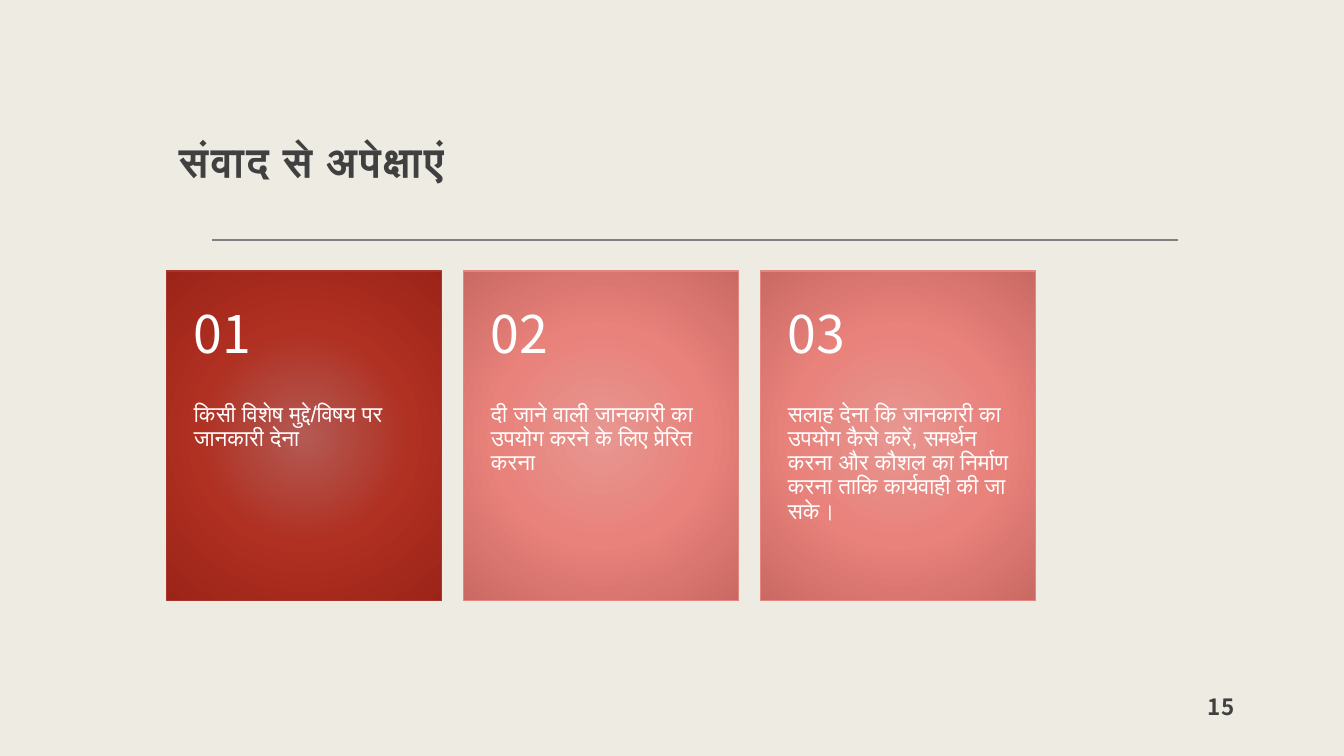
from lxml import etree
from pptx import Presentation
from pptx.dml.color import RGBColor
from pptx.enum.shapes import MSO_CONNECTOR, MSO_SHAPE
from pptx.enum.text import MSO_ANCHOR, PP_ALIGN
from pptx.oxml.ns import qn
from pptx.util import Pt

TITLE = "संवाद से अपेक्षाएं"
PAGE_NUMBER = "15"
EXPECTATIONS = [
    ("01", "किसी विशेष मुद्दे/विषय पर जानकारी देना"),
    ("02", "दी जाने वाली जानकारी का उपयोग करने के लिए प्रेरित करना"),
    ("03", "सलाह देना कि जानकारी का उपयोग कैसे करें, समर्थन करना और कौशल का "
           "निर्माण करना ताकि कार्यवाही की जा सके।"),
]

BACKGROUND = RGBColor(0xEE, 0xEB, 0xE2)
DARK = RGBColor(0x40, 0x40, 0x40)
WHITE = RGBColor(0xFF, 0xFF, 0xFF)
RULE = RGBColor(0x80, 0x80, 0x80)
RED_GLOW = [RGBColor(0xB3, 0x5A, 0x54), RGBColor(0xB0, 0x30, 0x22), RGBColor(0x9B, 0x24, 0x18)]
RED_EDGE = RGBColor(0xA9, 0x35, 0x29)
PINK_GLOW = [RGBColor(0xE8, 0x96, 0x91), RGBColor(0xE8, 0x82, 0x7B), RGBColor(0xCA, 0x69, 0x63)]
PINK_EDGE = RGBColor(0xE3, 0x86, 0x80)
CARD_COLOURS = [(RED_GLOW, RED_EDGE), (PINK_GLOW, PINK_EDGE), (PINK_GLOW, PINK_EDGE)]

HEADING_FONT = "Noto Sans CJK JP"
BODY_FONT = "Arial"

SLIDE_W, SLIDE_H = 1344, 756
SCALE = 12192000 / SLIDE_W
CARD_LEFT, CARD_TOP, CARD_W, CARD_H = 167, 271, 275, 330
CARD_PITCH = 297
NUMERAL_H = 132
PLAIN_INSETS = (12, 12, 12, 10)


def px(length):
    return round(length * SCALE)


def add_text(slide, text, box, insets, anchor, size, font_name, colour,
             bold=False, line_spacing=None, tracking=None):
    frame = slide.shapes.add_textbox(*map(px, box)).text_frame
    frame.word_wrap = True
    frame.vertical_anchor = anchor
    frame.margin_left, frame.margin_top, frame.margin_right, frame.margin_bottom = map(px, insets)
    paragraph = frame.paragraphs[0]
    paragraph.text = text
    paragraph.alignment = PP_ALIGN.LEFT
    if line_spacing:
        paragraph.line_spacing = line_spacing
    font = paragraph.font
    font.size = Pt(size)
    font.bold = bold
    font.color.rgb = colour
    font.name = font_name
    properties = paragraph._p.pPr.find(qn("a:defRPr"))
    etree.SubElement(properties, qn("a:cs"), typeface=font_name)
    if tracking:
        properties.set("spc", str(tracking))


def fill_radial(shape, colours):
    shape.fill.gradient()
    gradient = shape._element.spPr.find(qn("a:gradFill"))
    for child in list(gradient):
        gradient.remove(child)
    stops = etree.SubElement(gradient, qn("a:gsLst"))
    for position, colour in zip((0, 50000, 100000), colours):
        stop = etree.SubElement(stops, qn("a:gs"), pos=str(position))
        etree.SubElement(stop, qn("a:srgbClr"), val=str(colour))
    circle = etree.SubElement(gradient, qn("a:path"), {"path": "circle"})
    etree.SubElement(circle, qn("a:fillToRect"), {side: "50000" for side in "ltrb"})


def add_card(slide, index, numeral, message):
    left = CARD_LEFT + index * CARD_PITCH
    glow, edge = CARD_COLOURS[index]
    card = slide.shapes.add_shape(
        MSO_SHAPE.RECTANGLE, *map(px, (left, CARD_TOP, CARD_W, CARD_H)))
    card.shadow.inherit = False
    fill_radial(card, glow)
    card.line.color.rgb = edge
    card.line.width = Pt(0.75)
    add_text(slide, message, (left, CARD_TOP + NUMERAL_H, CARD_W, CARD_H - NUMERAL_H),
             (27, 0, 27, 36), MSO_ANCHOR.TOP, 16, BODY_FONT, WHITE, line_spacing=0.9)
    add_text(slide, numeral, (left, CARD_TOP, CARD_W, NUMERAL_H),
             (27, 18, 27, 18), MSO_ANCHOR.MIDDLE, 37, HEADING_FONT, WHITE, line_spacing=0.9)


def main():
    presentation = Presentation()
    presentation.slide_width, presentation.slide_height = px(SLIDE_W), px(SLIDE_H)
    slide = presentation.slides.add_slide(presentation.slide_layouts[6])
    slide.background.fill.solid()
    slide.background.fill.fore_color.rgb = BACKGROUND

    rule = slide.shapes.add_connector(MSO_CONNECTOR.STRAIGHT, *map(px, (212, 240, 1178, 240)))
    rule.line.color.rgb = RULE
    rule.line.width = Pt(2)
    etree.SubElement(rule._element.spPr, qn("a:effectLst"))

    add_text(slide, TITLE, (167, 48, 862, 148), PLAIN_INSETS, MSO_ANCHOR.BOTTOM,
             30, HEADING_FONT, DARK, bold=True, line_spacing=1.3, tracking=150)
    add_text(slide, PAGE_NUMBER, (1196, 680, 131, 50), PLAIN_INSETS, MSO_ANCHOR.BOTTOM,
             16, HEADING_FONT, DARK, bold=True)
    for index, (numeral, message) in enumerate(EXPECTATIONS):
        add_card(slide, index, numeral, message)
    presentation.save("out.pptx")


if __name__ == "__main__":
    main()
